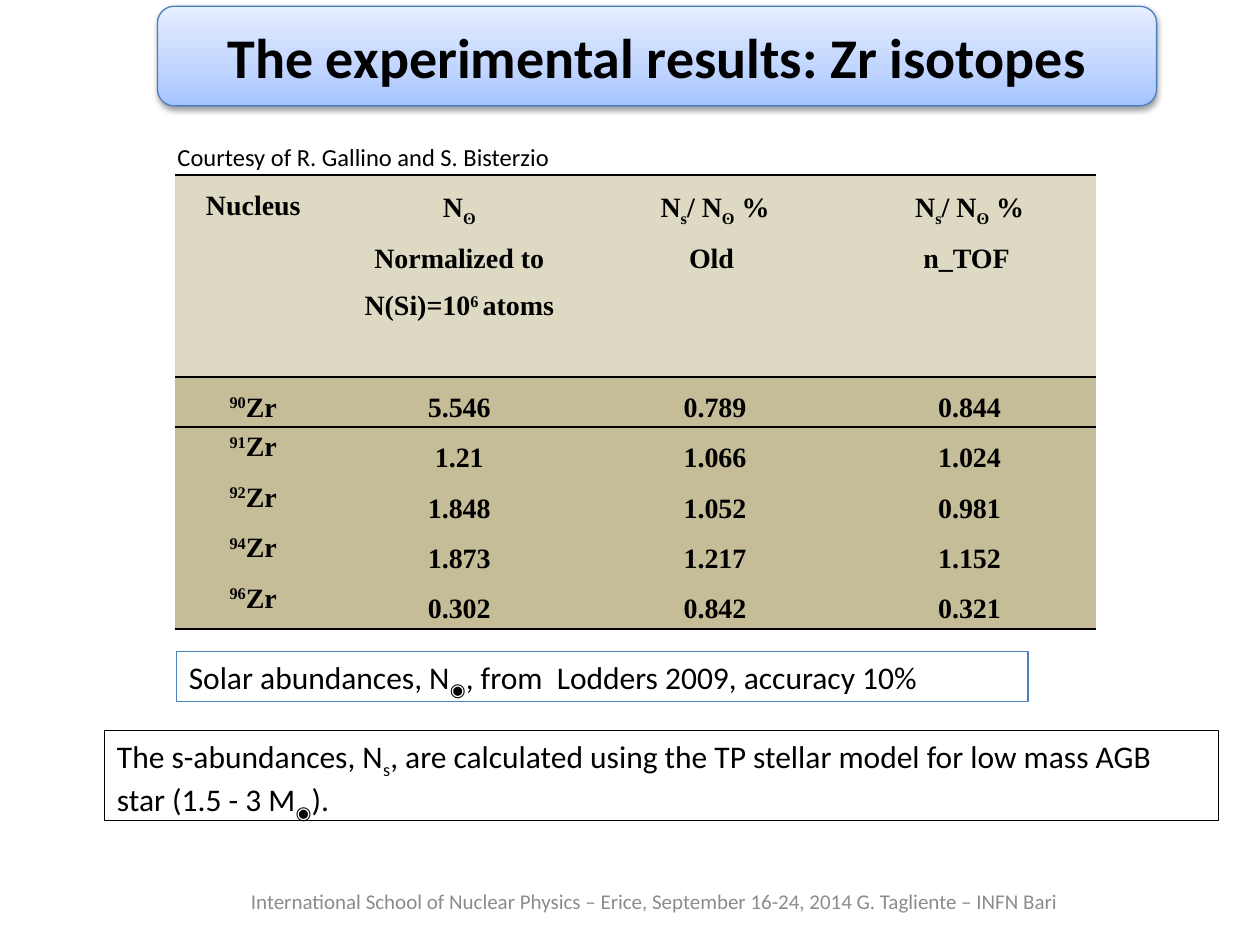
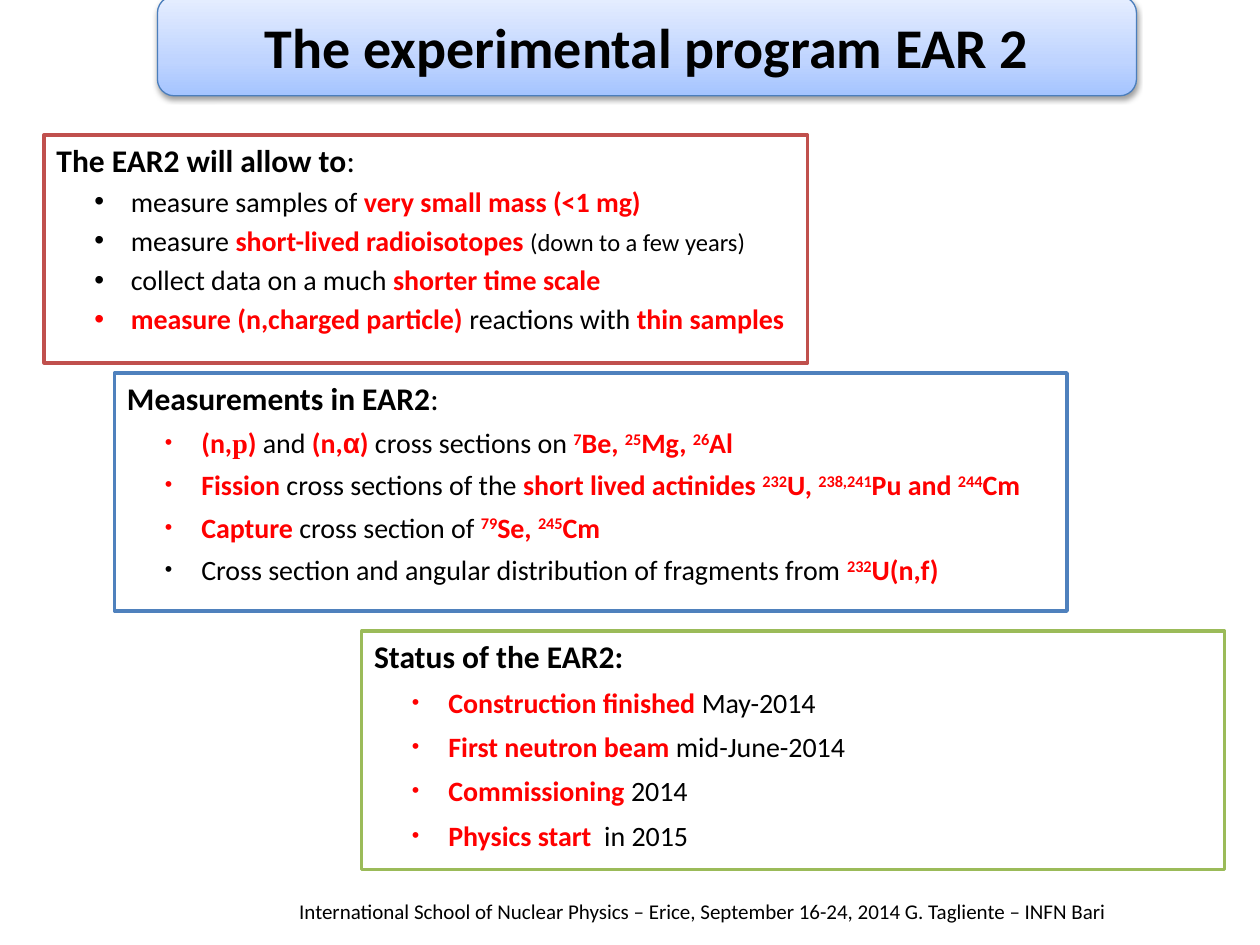
from copy import deepcopy

from lxml.etree import SubElement as Sub
from pptx import Presentation
from pptx.dml.color import RGBColor as RGB
from pptx.enum.shapes import MSO_SHAPE as Shape
from pptx.enum.text import MSO_ANCHOR as Anchor, PP_ALIGN as Align
from pptx.oxml import parse_xml
from pptx.oxml.ns import nsdecls, qn
from pptx.util import Inches, Pt

BLACK = RGB(0x00, 0x00, 0x00)
WHITE = RGB(0xFF, 0xFF, 0xFF)
RED = RGB(0xFF, 0x00, 0x00)
GRAY = RGB(0x8C, 0x8C, 0x8C)
BLUE = RGB(0x4F, 0x81, 0xBD)
BRICK = RGB(0xC0, 0x50, 0x4D)
GREEN = RGB(0x9B, 0xBB, 0x59)
EDGE = RGB(0x4B, 0x7E, 0xBC)
SAND = RGB(0xDD, 0xD9, 0xC3)
KHAKI = RGB(0xC4, 0xBD, 0x97)
BAND = [(0, RGB(0xA4, 0xC4, 0xFF)), (0.35, RGB(0xBF, 0xD4, 0xFF)),
        (1, RGB(0xE6, 0xEE, 0xFF))]

SANS, SERIF, SIGN = "Calibri", "Times New Roman", "Arial"
NO_STYLE = "{2D5ABB26-0587-4C30-8999-92F81FD0307C}"
FOOT = ("International School of Nuclear Physics – Erice, "
        "September 16-24, 2014 G. Tagliente – INFN Bari")
SUN = ("◉", "av")


def iso(mass, name):
    """Red nuclide with a raised mass number."""
    return [(mass, "r^"), (name, "r")]


class Deck:
    def __init__(self):
        self.prs = Presentation()
        self.prs.slide_width, self.prs.slide_height = Inches(10), Inches(7.5)
        self.slide = None

    def page(self, title, top, width):
        self.slide = self.prs.slides.add_slide(self.prs.slide_layouts[6])
        self.banner(title, top, width)

    def runs(self, para, parts, size, color=BLACK, font=SANS, bold=False):
        """Flags: r red bold, b bold, ^ raised, v lowered, t serif, a sign, s small."""
        for part in parts:
            text, flags = (part, "") if isinstance(part, str) else part
            run = para.add_run()
            run.text = text
            face = run.font
            face.name = SERIF if "t" in flags else SIGN if "a" in flags else font
            face.size = Pt(14 if "s" in flags else size)
            face.bold = bold or "r" in flags or "b" in flags
            face.color.rgb = RED if "r" in flags else color
            shift = 30000 if "^" in flags else -25000 if "v" in flags else 0
            if shift:
                face._element.set("baseline", str(shift))

    def text(self, at, parts, size, color=BLACK, align=Align.LEFT,
             anchor=Anchor.TOP, wrap=True):
        box = self.slide.shapes.add_textbox(*map(Inches, at))
        frame = box.text_frame
        frame.word_wrap, frame.vertical_anchor = wrap, anchor
        para = frame.paragraphs[0]
        para.alignment = align
        self.runs(para, parts, size, color)

    def foot(self, at, color, align):
        self.text(at, [FOOT], 12, color, align, Anchor.MIDDLE)

    def frame(self, at, line, width, kind=Shape.RECTANGLE, fill=None):
        box = self.slide.shapes.add_shape(kind, *map(Inches, at))
        box.shadow.inherit = False
        if fill is None:
            box.fill.background()
        else:
            box.fill.solid()
            box.fill.fore_color.rgb = fill
        box.line.color.rgb, box.line.width = line, Pt(width)
        box.text_frame.word_wrap = True
        box.text_frame.vertical_anchor = Anchor.TOP
        box.text_frame.paragraphs[0].alignment = Align.LEFT
        return box

    def banner(self, title, top, width):
        box = self.frame((1.25, top, width, 0.79), EDGE, 0.75,
                         Shape.ROUNDED_RECTANGLE)
        box.fill.gradient()
        box.fill.gradient_angle = 90
        props = box._element.spPr
        stops = props.find(".//" + qn("a:gsLst"))
        stops.append(deepcopy(stops[0]))
        for stop, (place, color) in zip(box.fill.gradient_stops, BAND):
            stop.position, stop.color.rgb = place, color
        # Soft shadow below the band
        glow = Sub(props.find(qn("a:effectLst")), qn("a:outerShdw"),
                   blurRad="40000", dist="20000", dir="5400000", rotWithShape="0")
        tint = Sub(glow, qn("a:srgbClr"), val="000000")
        Sub(tint, qn("a:alpha"), val="38000")
        box.text_frame.vertical_anchor = Anchor.MIDDLE
        para = box.text_frame.paragraphs[0]
        para.alignment = Align.CENTER
        self.runs(para, [title], 32, bold=True)

    def note(self, at, line, parts):
        box = self.frame(at, line, 0.75)
        self.runs(box.text_frame.paragraphs[0], parts, 18)

    def panel(self, at, line, head, items, gap, dot=100):
        frame = self.frame(at, line, 2, fill=WHITE).text_frame
        self.runs(frame.paragraphs[0], head, 18)
        for item in items:
            para = frame.add_paragraph()
            para.alignment = Align.LEFT
            props = para._p.get_or_add_pPr()
            props.set("marL", str(Inches(0.59)))
            props.set("indent", str(Inches(-0.29)))
            Sub(props, qn("a:buSzPct"), val=str(dot * 1000))
            Sub(props, qn("a:buFont"), typeface=SIGN)
            Sub(props, qn("a:buChar"), char="•")
            para.space_before = Pt(gap)
            self.runs(para, item, 16)

    def rule(self, cell, side):
        line = parse_xml(
            f'<a:{side} {nsdecls("a")} w="12700"><a:solidFill>'
            f'<a:srgbClr val="{BLACK}"/></a:solidFill></a:{side}>')
        cell._tc.get_or_add_tcPr().insert(0, line)

    def table(self, at, cols, rows, data):
        grid = self.slide.shapes.add_table(
            len(rows), len(cols), *map(Inches, at)).table
        grid._tbl.tblPr.find(qn("a:tableStyleId")).text = NO_STYLE
        grid.first_row = grid.horz_banding = False
        for col, width in zip(grid.columns, cols):
            col.width = Inches(width)
        for row, height in zip(grid.rows, rows):
            row.height = Inches(height)
        for r, line in enumerate(data):
            for c, paras in enumerate(line):
                cell = grid.cell(r, c)
                cell.margin_left = cell.margin_right = Inches(0.07)
                cell.margin_top = cell.margin_bottom = 0
                cell.fill.solid()
                cell.fill.fore_color.rgb = KHAKI if r else SAND
                if r in (0, len(rows) - 1):
                    self.rule(cell, "lnB")
                if r < 2:
                    self.rule(cell, "lnT")
                frame = cell.text_frame
                for i, parts in enumerate(paras):
                    para = frame.add_paragraph() if i else frame.paragraphs[0]
                    para.alignment = Align.CENTER
                    tight = c == 0 and r > 1
                    para.line_spacing = 1.15 if tight else 1.5
                    if tight:
                        para.space_after = Pt(10)
                    self.runs(para, parts, 16, font=SERIF, bold=True)


def zirconium(deck):
    deck.page("The experimental results: Zr isotopes", 0.05, 7.93)
    deck.text((1.31, 1.08, 3.28, 0.34),
              ["Courtesy of R. Gallino and S. Bisterzio"], 14, wrap=False)

    # Abundance table
    sun = ("ʘ", "v")
    ratio = ["N", ("s", "v"), "/ N", sun, " %"]
    head = [[["Nucleus"]],
            [["N", sun], ["Normalized to N(Si)=10", ("6 ", "^"), "atoms"]],
            [ratio, ["Old "]],
            [ratio, ["n_TOF "]]]
    values = [("90", "5.546", "0.789", "0.844"),
              ("91", "1.21", "1.066", "1.024"),
              ("92", "1.848", "1.052", "0.981"),
              ("94", "1.873", "1.217", "1.152"),
              ("96", "0.302", "0.842", "0.321")]
    body = [[[[(mass, "^"), "Zr"]]] + [[[num]] for num in nums]
            for mass, *nums in values]
    deck.table((1.39, 1.39, 7.31, 3.6), (1.24, 2.03, 2.03, 2.01),
               [1.6] + [0.4] * 5, [head] + body)

    # Notes
    deck.note((1.4, 5.17, 6.76, 0.4), BLUE,
              ["Solar abundances, N", SUN, ", from  Lodders 2009, accuracy 10%"])
    deck.note((0.83, 5.8, 8.84, 0.71), BLACK,
              ["The s-abundances, N", ("s", "v"),
               ", are calculated using the TP stellar model for low mass AGB "
               "star (1.5 - 3 M", SUN, ")."])
    deck.foot((1.77, 6.95, 6.85, 0.4), GRAY, Align.CENTER)


def program(deck):
    deck.page("The experimental program EAR 2", -0.03, 7.77)

    # Aims
    deck.panel((0.35, 1.07, 6.06, 1.81), BRICK,
               [("The EAR2 will allow to", "b"), ":"],
               [["measure samples of ", ("very small mass (<1 mg)", "r")],
                ["measure ", ("short-lived radioisotopes ", "r"),
                 ("(down to a few years)", "s")],
                ["collect data on a much ", ("shorter time scale", "r")],
                [("measure (n,charged particle)", "r"), " reactions with ",
                 ("thin samples", "r")]], 3.2)

    # Measurements
    deck.panel((0.91, 2.96, 7.56, 1.89), BLUE,
               [("Measurements in EAR2", "b"), ":"],
               [[("(n,", "r"), ("p", "rt"), (") ", "r"), "and ", ("(n,", "r"),
                 ("α", "ra"), (") ", "r"), "cross sections on ",
                 *iso("7", "Be, "), *iso("25", "Mg, "), *iso("26", "Al")],
                [("Fission", "r"), " cross sections of the ",
                 ("short lived actinides ", "r"), *iso("232", "U, "),
                 *iso("238,241", "Pu and "), *iso("244", "Cm")],
                [("Capture", "r"), " cross section of ",
                 *iso("79", "Se, "), *iso("245", "Cm")],
                ["Cross section and angular distribution of fragments from ",
                 *iso("232", "U(n,f)")]], 5, 76)

    # Status
    deck.panel((2.87, 5.01, 6.85, 1.89), GREEN,
               [("Status of the EAR2:", "b")],
               [[("Construction finished ", "r"), "May-2014"],
                [("First neutron beam ", "r"), "mid-June-2014"],
                [("Commissioning ", "r"), "2014"],
                [("Physics start", "r"), "  in 2015"]], 6, 76)
    deck.foot((1.77, 7.03, 7.11, 0.4), BLACK, Align.RIGHT)


def main():
    deck = Deck()
    zirconium(deck)
    program(deck)
    deck.prs.save("out.pptx")


if __name__ == "__main__":
    main()
